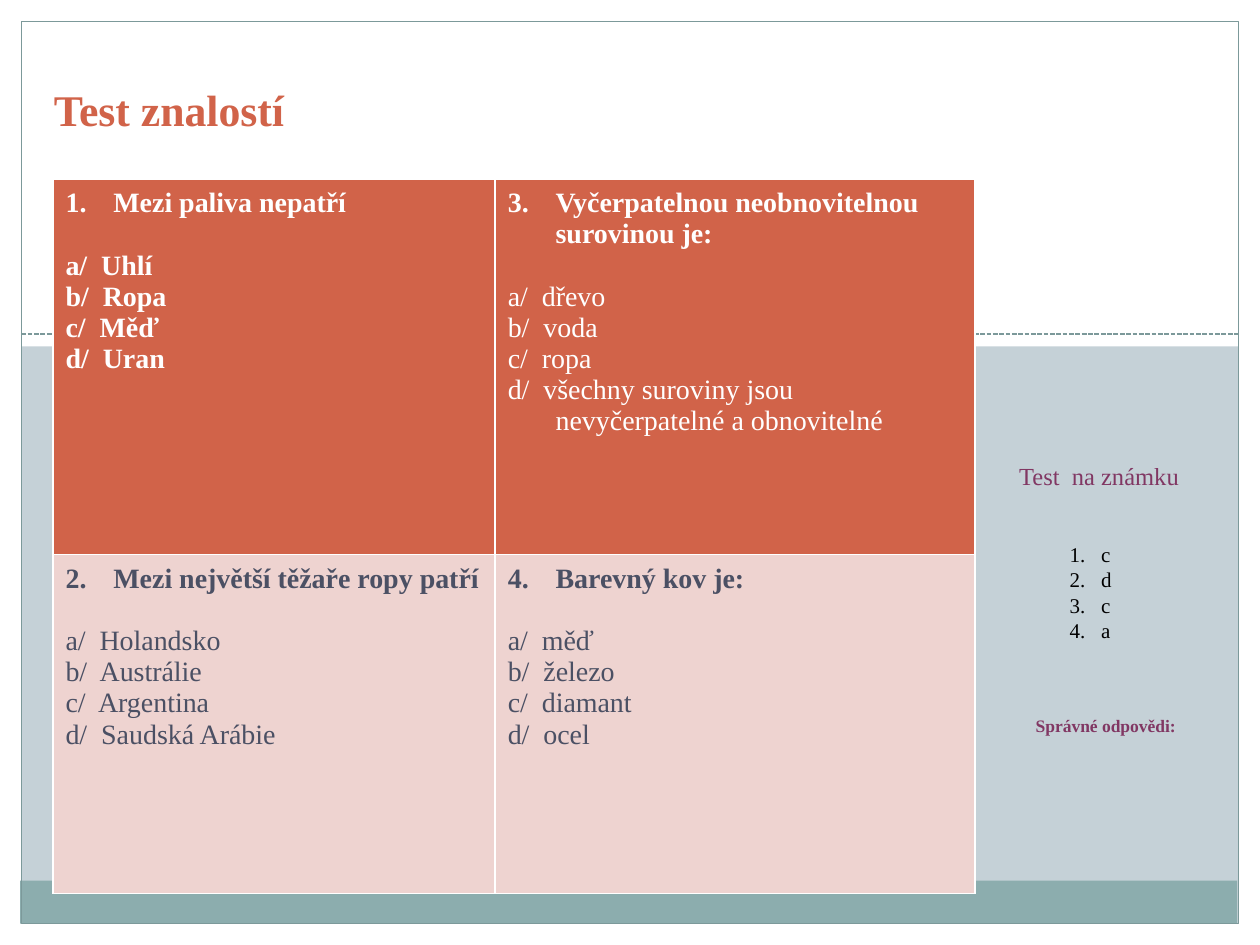
from lxml import etree
from pptx import Presentation
from pptx.dml.color import RGBColor
from pptx.enum.dml import MSO_LINE
from pptx.enum.shapes import MSO_CONNECTOR, MSO_SHAPE
from pptx.enum.text import MSO_ANCHOR, PP_ALIGN
from pptx.oxml.ns import qn
from pptx.util import Pt

RECT = MSO_SHAPE.RECTANGLE
LINE = MSO_CONNECTOR.STRAIGHT
DASH = MSO_LINE.SQUARE_DOT
BOTTOM = MSO_ANCHOR.BOTTOM
LEFT, CENTER = PP_ALIGN.LEFT, PP_ALIGN.CENTER

PX = 9144  # 100 px to the inch
FONT = "Times New Roman"
HEX = {
    "back": "C5D1D7", "white": "FFFFFF", "band": "8CADAE", "rule": "7C999A",
    "red": "D16349", "pink": "EED3D0", "slate": "4B5064",
    "plum": "813763", "black": "000000",
}
RGB = {name: RGBColor.from_string(code) for name, code in HEX.items()}


def add_run(para, text, size, color, bold=False):
    run = para.add_run()
    run.text = text
    font = run.font
    font.name, font.size, font.bold = FONT, Pt(size), bold
    font.color.rgb = RGB[color]


def indent(para, px, start=None):
    """Hang the paragraph, and number it when a start is given."""
    props = para._p.get_or_add_pPr()
    props.set("marL", str(px * PX))
    props.set("indent", str(-px * PX))
    if start:
        num = etree.SubElement(props, qn("a:buAutoNum"), type="arabicPeriod")
        if start > 1:
            num.set("startAt", str(start))


prs = Presentation()
prs.slide_width, prs.slide_height = 1000 * PX, 750 * PX
slide = prs.slides.add_slide(prs.slide_layouts[6])
shapes = slide.shapes

# Background, white margins, top panel, bottom band and frame
slide.background.fill.solid()
slide.background.fill.fore_color.rgb = RGB["back"]
for x, y, w, h, color in [
    (0, 733, 1000, 17, "white"),
    (983, 0, 17, 750, "white"),
    (0, 0, 17, 750, "white"),
    (0, 0, 1000, 275, "white"),
    (16, 699, 966, 34, "band"),
    (17, 17, 966, 716, None),
]:
    box = shapes.add_shape(RECT, x * PX, y * PX, w * PX, h * PX)
    box.shadow.inherit = False
    if color:
        box.fill.solid()
        box.fill.fore_color.rgb = RGB[color]
        box.line.fill.background()
    else:
        box.fill.background()
        box.line.color.rgb = RGB["rule"]
        box.line.width = Pt(0.75)

# Dashed rule
rule = shapes.add_connector(LINE, 17 * PX, 265 * PX, 983 * PX, 265 * PX)
rule.line.color.rgb = RGB["rule"]
rule.line.width = Pt(0.9)
rule.line.dash_style = DASH
etree.SubElement(rule._element.spPr, qn("a:effectLst"))

# Title and side labels
for x, y, w, h, text, size, color, bold, align in [
    (33, 25, 319, 87, "Test znalostí", 25, "red", True, LEFT),
    (799, 562, 157, 27, "Správné odpovědi:", 10, "plum", True, CENTER),
    (799, 360, 157, 34, "Test  na známku", 14, "plum", False, LEFT),
]:
    frame = shapes.add_textbox(x * PX, y * PX, w * PX, h * PX).text_frame
    frame.word_wrap = True
    frame.vertical_anchor = BOTTOM
    para = frame.paragraphs[0]
    para.alignment = align
    add_run(para, text, size, color, bold)

# Question table: number, question, options, bold options
quiz = [
    [(1, "Mezi paliva nepatří",
      ["a/  Uhlí", "b/  Ropa", "c/  Měď", "d/  Uran"], True),
     (3, "Vyčerpatelnou neobnovitelnou surovinou je:",
      ["a/  dřevo", "b/  voda", "c/  ropa",
       "d/  všechny suroviny jsou nevyčerpatelné a obnovitelné"], False)],
    [(2, "Mezi největší těžaře ropy patří",
      ["a/  Holandsko", "b/  Austrálie", "c/  Argentina",
       "d/  Saudská Arábie"], False),
     (4, "Barevný kov je:",
      ["a/  měď", "b/  železo", "c/  diamant", "d/  ocel"], False)],
]
looks = [("red", "white"), ("pink", "slate")]
table = shapes.add_table(2, 2, 42 * PX, 142 * PX, 732 * PX, 567 * PX).table
table.first_row = table.horz_banding = False
for col, w in zip(table.columns, (351, 381)):
    col.width = w * PX
for row, h in zip(table.rows, (298, 269)):
    row.height = h * PX

for r, (fill, ink) in enumerate(looks):
    for c, (start, ask, opts, bold) in enumerate(quiz[r]):
        cell = table.cell(r, c)
        cell.margin_left = cell.margin_right = 10 * PX
        cell.margin_top = cell.margin_bottom = 7 * PX
        cell.fill.solid()
        cell.fill.fore_color.rgb = RGB[fill]

        # White borders go ahead of the fill
        props = cell._tc.get_or_add_tcPr()
        for i, side in enumerate("LRTB"):
            edge = etree.Element(qn("a:ln" + side), w=str(Pt(1)))
            paint = etree.SubElement(edge, qn("a:solidFill"))
            etree.SubElement(paint, qn("a:srgbClr"), val=HEX["white"])
            props.insert(i, edge)

        para = cell.text_frame.paragraphs[0]
        para.space_after = Pt(18)
        indent(para, 38, start)
        add_run(para, ask, 16, ink, True)
        for opt in opts:
            para = cell.text_frame.add_paragraph()
            indent(para, 38)
            add_run(para, opt, 16, ink, bold)

# Numbered answers
frame = shapes.add_textbox(839 * PX, 405 * PX, 55 * PX, 131 * PX).text_frame
frame.word_wrap = True
frame.margin_top = 25 * PX
for i, key in enumerate("cdca"):
    para = frame.add_paragraph() if i else frame.paragraphs[0]
    indent(para, 25, 1)
    add_run(para, key, 12, "black")

prs.save("out.pptx")
